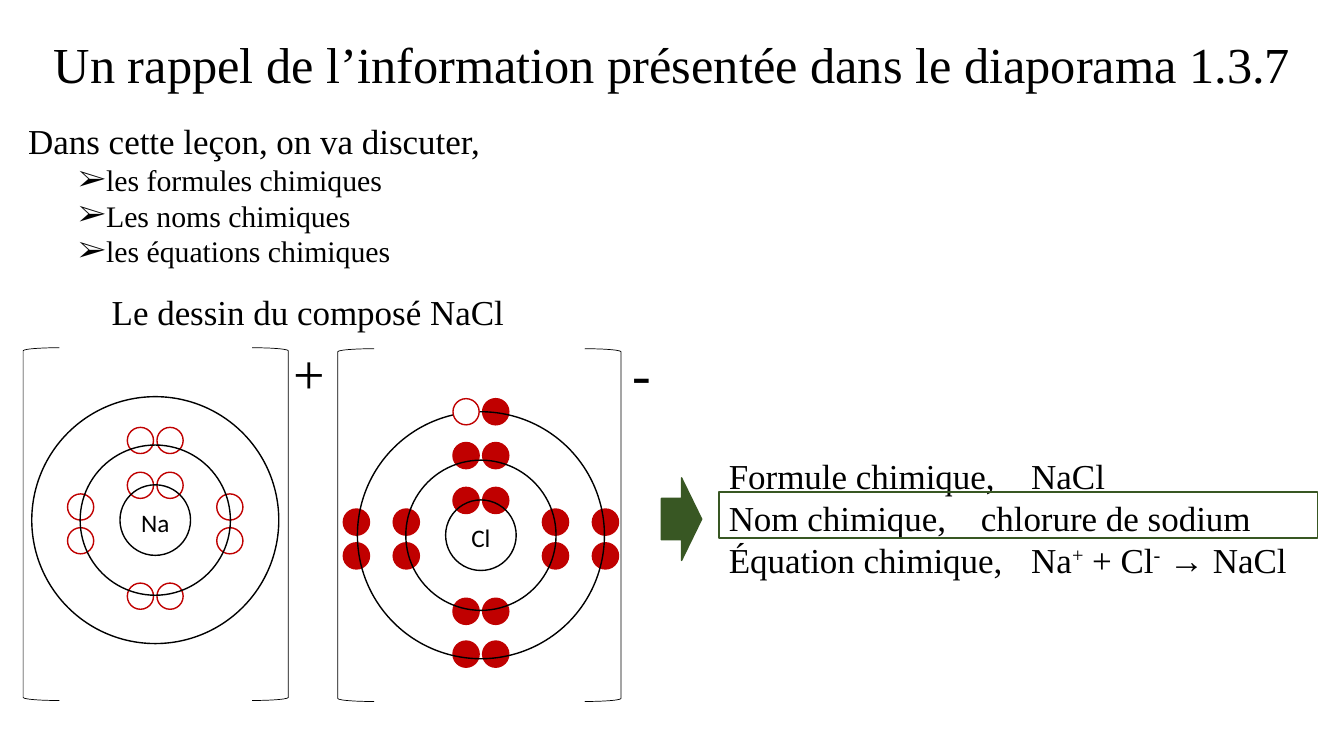
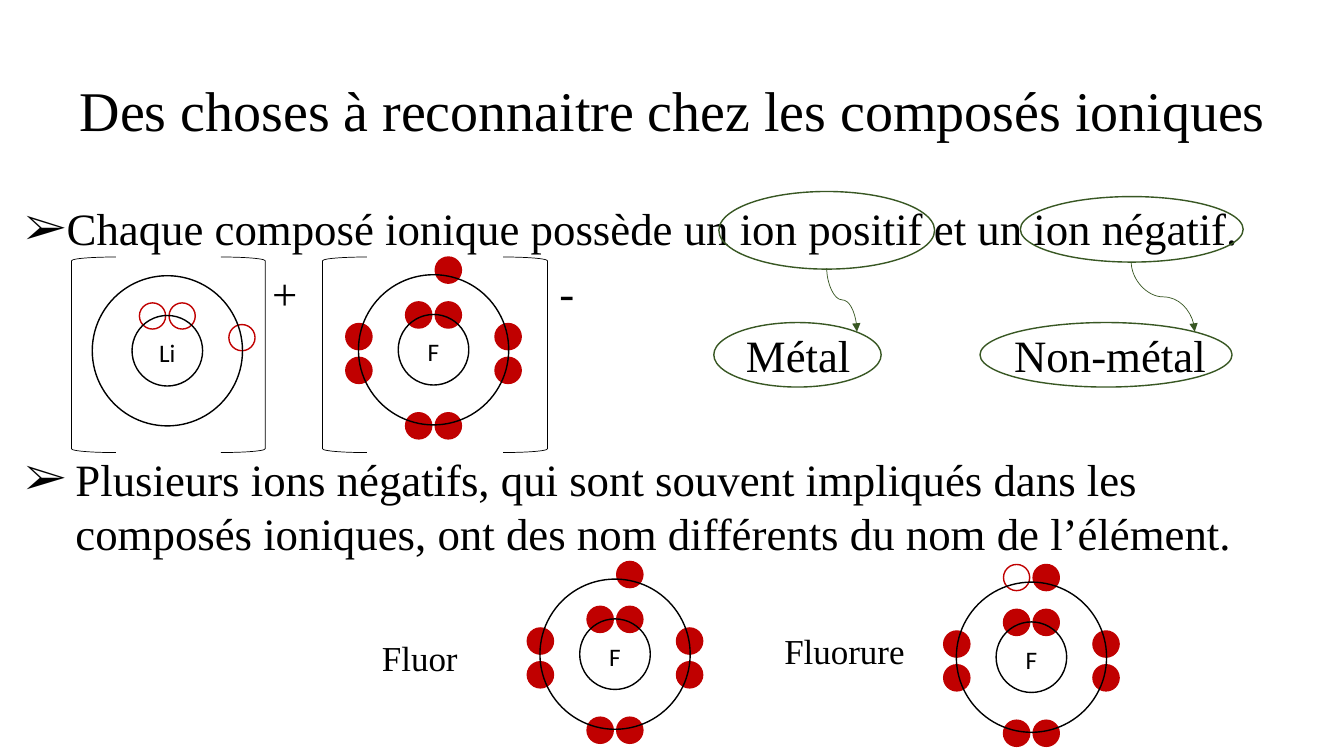
from lxml.etree import SubElement
from pptx import Presentation
from pptx.dml.color import RGBColor
from pptx.enum.shapes import MSO_CONNECTOR, MSO_SHAPE as SHAPE
from pptx.enum.text import MSO_ANCHOR, MSO_AUTO_SIZE as AUTO, PP_ALIGN as ALIGN
from pptx.oxml.ns import qn
from pptx.util import Inches, Pt

BLACK = RGBColor(0x00, 0x00, 0x00)
WHITE = RGBColor(0xFF, 0xFF, 0xFF)
RED = RGBColor(0xC0, 0x00, 0x00)
GREEN = RGBColor(0x38, 0x57, 0x23)
SERIF, SANS = "Times New Roman", "Calibri"

# Electron shells: ring radius, then top, bottom and side distances of the electrons
SHELLS = [(0.35, 0.345, 0.35, 0.35), (0.745, 0.79, 0.755, 0.74),
          (1.225, 1.225, 1.18, 1.235)]
PAIR, UP, DOWN = 0.147, -0.13, 0.205
ELECTRON_R = 0.13

# Electrons per shell, in the order top, right, bottom, left:
# x filled, o hollow, O hollow in front of the ring, . vacant
SODIUM = ["oo", "oooooooo", ""]
CHLORIDE = ["xx", "xxxxxxxx", "Oxxxxxxx"]
LITHIUM = ["oo", "..o"]
FLUORINE = ["xx", ".xxxxxxx"]
FLUORIDE = ["xx", "oxxxxxxx"]


class Deck:
    def __init__(self):
        self.prs = Presentation()
        self.prs.slide_width, self.prs.slide_height = Inches(13.33), Inches(7.5)
        self.s = None

    def slide(self):
        self.s = self.prs.slides.add_slide(self.prs.slide_layouts[1])

    def runs(self, p, parts, size, font=SERIF):
        """Write a string, or a list of (text, raised) pairs."""
        for text, raised in [(parts, False)] if isinstance(parts, str) else parts:
            r = p.add_run()
            r.text = text
            for key, value in {"size": Pt(size), "name": font}.items():
                setattr(r.font, key, value)
            r.font.color.rgb = BLACK
            if raised:
                r._r.get_or_add_rPr().set("baseline", "30000")

    def style(self, p, fmt, left=0, hang=0, bullet=None):
        for key, value in fmt.items():
            setattr(p, key, value)
        pPr = p._p.get_or_add_pPr()
        pPr.set("marL", str(Inches(left)))
        pPr.set("indent", str(Inches(-hang)))
        if bullet:
            SubElement(pPr, qn("a:buFont"), typeface=SERIF)
            SubElement(pPr, qn("a:buChar"), char=bullet)
        else:
            SubElement(pPr, qn("a:buNone"))

    def place(self, sp, x, y, w, h):
        box = {"left": x, "top": y, "width": w, "height": h}
        for key, value in box.items():
            setattr(sp, key, Inches(value))
        sp.text_frame.word_wrap = True
        sp.text_frame.auto_size = AUTO.NONE
        return sp.text_frame

    def title(self, text, box, size):
        tf = self.place(self.s.shapes.title, *box)
        tf.vertical_anchor = MSO_ANCHOR.MIDDLE
        p = tf.paragraphs[0]
        self.style(p, {"alignment": ALIGN.CENTER, "line_spacing": 0.9})
        self.runs(p, text, size)

    def body(self, items, box, spacing):
        """items: (text, size, level, left, hang, bullet)"""
        tf = self.place(self.s.placeholders[1], *box)
        for i, (text, size, level, left, hang, bullet) in enumerate(items):
            p = tf.add_paragraph() if i else tf.paragraphs[0]
            fmt = {"level": level, "line_spacing": spacing,
                   "space_before": Pt(5 if i else 0)}
            self.style(p, fmt, left, hang, bullet)
            self.runs(p, text, size)

    def text(self, lines, x, y, w, h, size, font=SERIF, align=ALIGN.LEFT):
        sp = self.s.shapes.add_textbox(*map(Inches, (x, y, w, h)))
        tf = sp.text_frame
        tf.word_wrap, tf.auto_size = False, AUTO.SHAPE_TO_FIT_TEXT
        for i, line in enumerate(lines):
            p = tf.add_paragraph() if i else tf.paragraphs[0]
            p.alignment = align
            self.runs(p, line, size, font)
        return tf

    def shape(self, kind, x, y, w, h, line=BLACK, fill=None, width=1):
        sp = self.s.shapes.add_shape(kind, *map(Inches, (x, y, w, h)))
        sp.shadow.inherit = False
        if fill is None:
            sp.fill.background()
        else:
            sp.fill.solid()
            sp.fill.fore_color.rgb = fill
        sp.line.color.rgb, sp.line.width = line, Pt(width)

    def circle(self, cx, cy, radius, line=BLACK, fill=None):
        self.shape(SHAPE.OVAL, cx - radius, cy - radius, 2 * radius, 2 * radius,
                   line, fill)

    def brackets(self, left, right, y, w, h):
        self.shape(SHAPE.LEFT_BRACKET, left, y, w, h, width=0.5)
        self.shape(SHAPE.RIGHT_BRACKET, right - w, y, w, h, width=0.5)

    def atom(self, symbol, cx, cy, electrons):
        self.text([symbol], cx - 0.3, cy - 0.18, 0.6, 0.4, 18, SANS, ALIGN.CENTER)
        for (radius, top, bottom, side), marks in zip(SHELLS, electrons):
            sites = [(-PAIR, -top), (PAIR, -top), (side, UP), (side, DOWN),
                     (-PAIR, bottom), (PAIR, bottom), (-side, UP), (-side, DOWN)]
            front = []
            for mark, (dx, dy) in zip(marks, sites):
                spot = (cx + dx, cy + dy, ELECTRON_R, RED, RED if mark == "x" else WHITE)
                if mark == "O":
                    front.append(spot)
                elif mark != ".":
                    self.circle(*spot)
            self.circle(cx, cy, radius)
            for spot in front:
                self.circle(*spot)

    def curve(self, x1, y1, x2, y2):
        """Curved arrow that leaves and arrives vertically."""
        w, h = y2 - y1, x2 - x1
        x, y = (x1 + x2 - w) / 2, (y1 + y2 - h) / 2
        c = self.s.shapes.add_connector(
            MSO_CONNECTOR.CURVE, *map(Inches, (x, y, x + w, y + h)))
        c.line.color.rgb, c.line.width = GREEN, Pt(0.5)
        spPr = c._element.spPr
        xfrm = spPr.find(qn("a:xfrm"))
        xfrm.set("rot", str(270 * 60000))
        xfrm.set("flipH", "1")
        SubElement(spPr.find(qn("a:ln")), qn("a:tailEnd"), type="triangle")
        SubElement(spPr, qn("a:effectLst"))


def recap(d):
    d.slide()
    d.title("Un rappel de l’information présentée dans le diaporama 1.3.7",
            (0.18, 0.15, 12.98, 1.04), 36)
    topics = ["les formules chimiques", "Les noms chimiques", "les équations chimiques"]
    d.body([("Dans cette leçon, on va discuter,", 25, 0, 0, 0, None)]
           + [(topic, 21.3, 1, 0.75, 0.25, "➢") for topic in topics],
           (0.18, 1.22, 12.98, 1.55), 0.8)

    # Drawing of the compound
    d.text(["Le dessin du composé NaCl"], 1.01, 2.83, 4.14, 0.52, 25)
    d.atom("Na", 1.54, 5.16, SODIUM)
    d.brackets(0.23, 2.86, 3.45, 0.36, 3.5)
    d.text(["+"], 2.81, 3.31, 0.52, 0.77, 40)
    d.atom("Cl", 4.77, 5.31, CHLORIDE)
    d.brackets(3.35, 6.16, 3.46, 0.36, 3.5)
    d.text(["-"], 6.17, 3.31, 0.39, 0.77, 40)

    # Formula, name and equation
    d.shape(SHAPE.RIGHT_ARROW, 6.56, 4.74, 0.4, 0.82, GREEN, GREEN)
    equation = [("Équation chimique,\tNa", False), ("+", True), (" + Cl", False),
                ("-", True), (" → NaCl", False)]
    d.text(["Formule chimique,\tNaCl", "Nom chimique,\tchlorure de sodium", equation],
           7.13, 4.46, 5.94, 1.36, 25)
    d.shape(SHAPE.RECTANGLE, 7.13, 4.88, 5.94, 0.46, GREEN)


def ionic_compounds(d):
    d.slide()
    d.title("Des choses à reconnaitre chez les composés ioniques",
            (0.15, 0.4, 13.04, 1.45), 40)
    d.body([("Chaque composé ionique possède un ion positif et un ion négatif.",
             32, 0, 0.25, 0.25, "➢")], (0.15, 2, 13.04, 0.77), 0.9)

    # Ions linked to the kind of element
    d.text(["Métal"], 7.3, 3.2, 1.27, 0.64, 32)
    d.text(["Non-métal"], 9.96, 3.2, 2.15, 0.64, 32)
    for oval in [(7.13, 1.9, 2.14, 0.77), (10.12, 1.95, 2.21, 0.65),
                 (7.08, 3.2, 1.66, 0.64), (9.72, 3.2, 2.5, 0.64)]:
        d.shape(SHAPE.OVAL, *oval, GREEN)
    d.curve(8.2, 2.66, 8.5, 3.29)
    d.curve(11.22, 2.6, 11.85, 3.29)

    # Lithium and fluorine ions
    d.atom("Li", 1.66, 3.48, LITHIUM)
    d.atom("F", 4.3, 3.47, FLUORINE)
    for left, right in [(0.71, 2.63), (3.2, 5.43)]:
        d.brackets(left, right, 2.55, 0.44, 1.94)
    d.text(["+"], 2.6, 2.59, 0.45, 0.64, 32)
    d.text(["-"], 5.45, 2.58, 0.35, 0.64, 32)

    # Names of the negative ions
    tf = d.text(["Plusieurs ions négatifs, qui sont souvent impliqués dans les composés "
                 "ioniques, ont des nom différents du nom de l’élément."],
                0.15, 4.43, 13.04, 1.18, 32)
    tf.word_wrap = True
    d.style(tf.paragraphs[0], {}, 0.5, 0.5, "➢")
    d.text(["Fluor"], 3.69, 6.27, 0.96, 0.52, 25)
    d.atom("F", 6.1, 6.49, FLUORINE)
    d.text(["Fluorure"], 7.68, 6.2, 1.41, 0.52, 25)
    d.atom("F", 10.23, 6.52, FLUORIDE)


def main():
    d = Deck()
    recap(d)
    ionic_compounds(d)
    d.prs.save("out.pptx")


if __name__ == "__main__":
    main()
